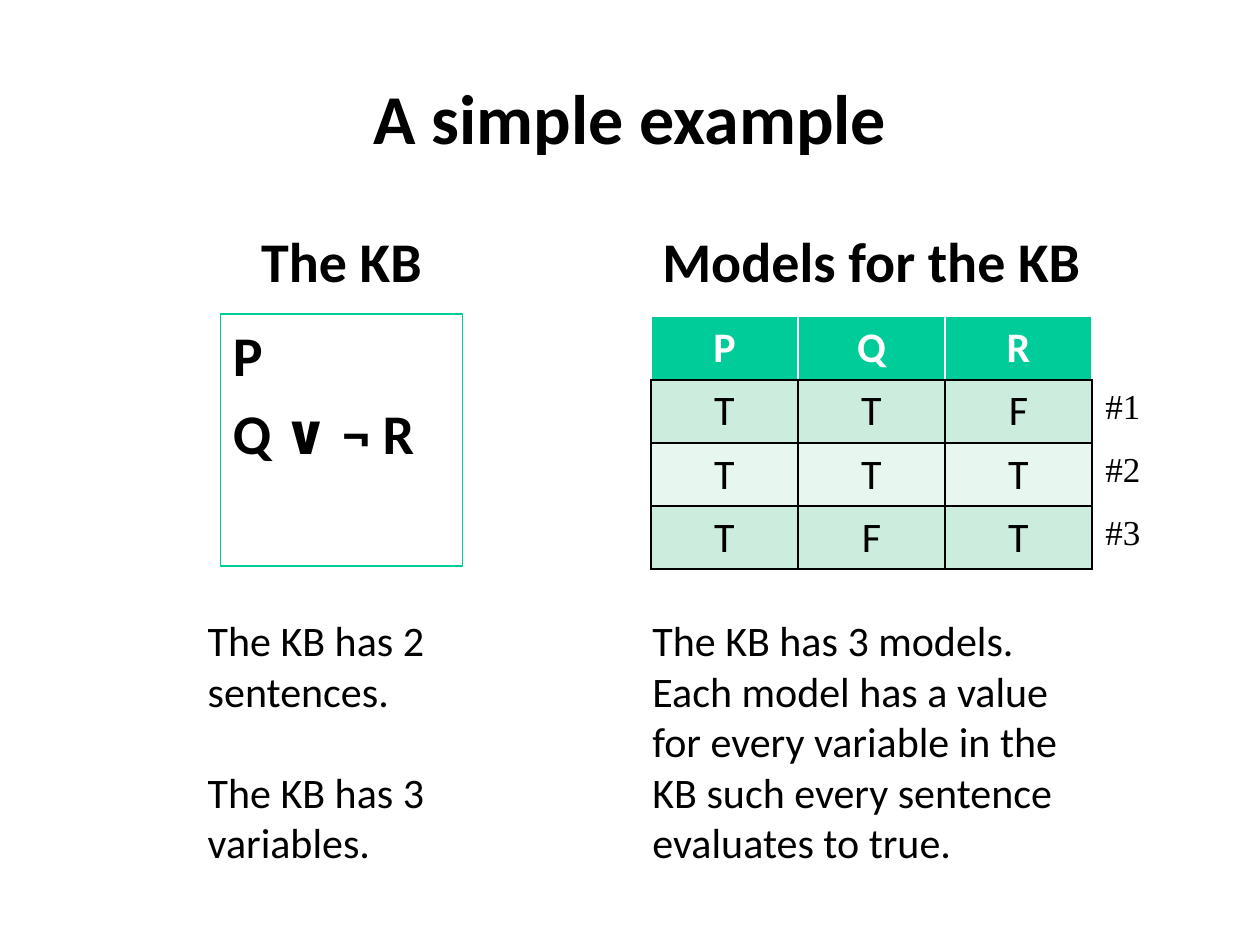
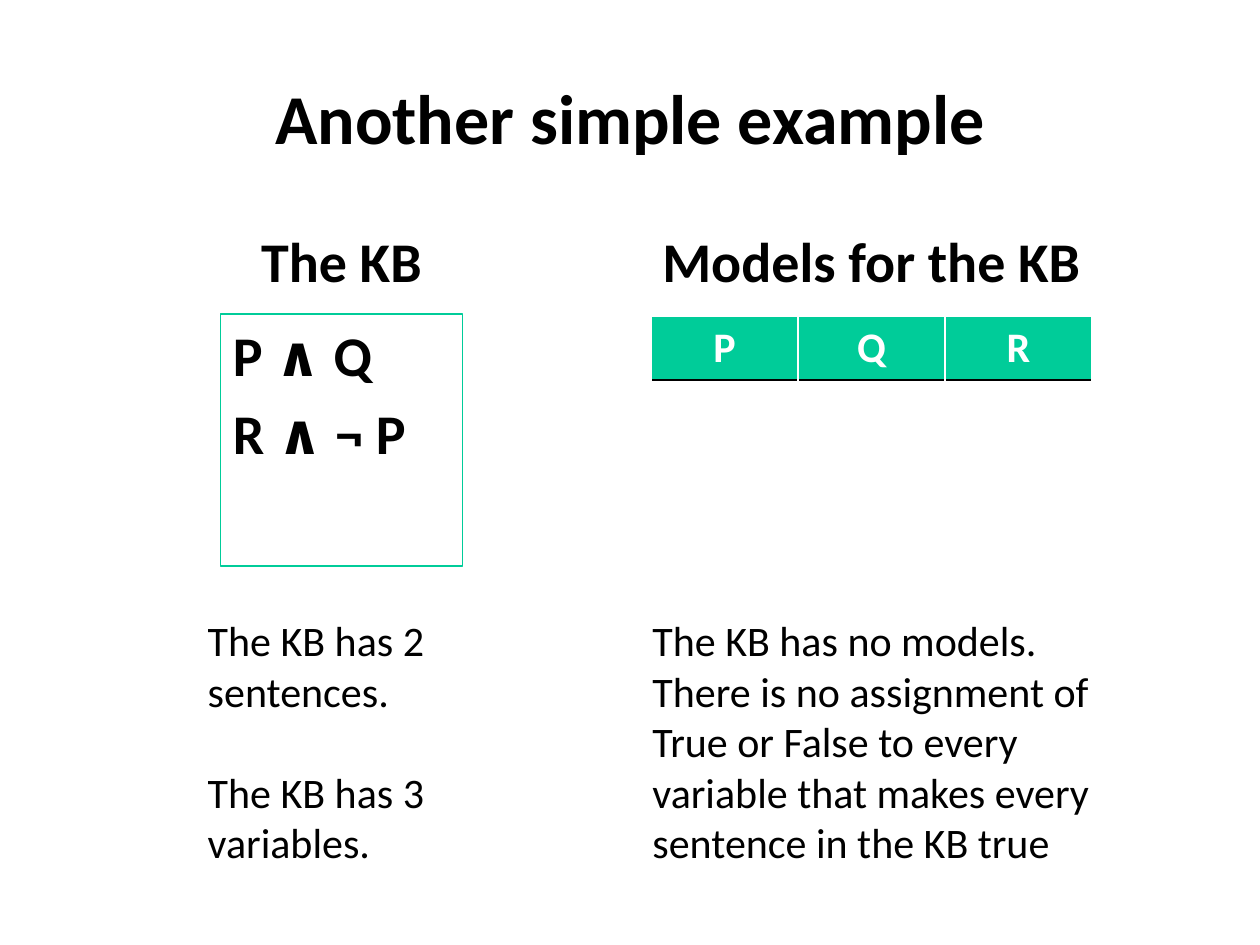
import pptx
import pptx.util
import pptx.dml.color
import pptx.enum.shapes
import pptx.enum.text
import pptx.oxml

Pt = pptx.util.Pt
Align = pptx.enum.text.PP_ALIGN
Anchor = pptx.enum.text.MSO_ANCHOR

# Shared look
GREEN, MINT, PALE = "00CC99", "CCECDE", "E7F6EF"
BLACK, WHITE = "000000", "FFFFFF"
ROW = 36
NS = 'xmlns:a="http://schemas.openxmlformats.org/drawingml/2006/main"'


def tint(code):
    return pptx.dml.color.RGBColor.from_string(code)


def write(frame, text, size=24, bold=False, color=BLACK, font="Calibri",
          align=Align.LEFT, anchor=Anchor.TOP, gap=0, wrap=True):
    """Fill a text frame, one paragraph for each line of text."""
    frame.word_wrap = wrap
    frame.vertical_anchor = anchor
    for num, line in enumerate(text.split("\n")):
        para = frame.paragraphs[0] if num == 0 else frame.add_paragraph()
        para.alignment = align
        para.space_before = Pt(gap if num else 0)
        run = para.add_run()
        run.text = line
        run.font.name, run.font.size, run.font.bold = font, Pt(size), bold
        run.font.color.rgb = tint(color)


# What differs from slide to slide
slides = [
    ("A simple example", "P\nQ ∨ ¬ R", ["TTF", "TTT", "TFT"],
     "The KB has 3 models. Each model has a value for every variable "
     "in the KB such every sentence evaluates to true."),
    ("Another simple example", "P ∧ Q\nR ∧ ¬ P", [],
     "The KB has no models. There is no assignment of True or False to "
     "every variable that makes every sentence in the KB true"),
]

deck = pptx.Presentation()
deck.slide_width, deck.slide_height = Pt(720), Pt(540)

for title, rules, models, note in slides:
    slide = deck.slides.add_slide(deck.slide_layouts[6])
    shapes = slide.shapes

    # Title and column heads
    head = dict(bold=True, align=Align.CENTER)
    box = shapes.add_textbox(Pt(36), Pt(21.6), Pt(648), Pt(90))
    write(box.text_frame, title, size=40, anchor=Anchor.MIDDLE, **head)
    for left, width, label in [(126, 138.24, "The KB"),
                               (360, 276, "Models for the KB")]:
        box = shapes.add_textbox(Pt(left), Pt(121), Pt(width), Pt(50.4))
        write(box.text_frame, label, size=32, anchor=Anchor.BOTTOM, **head)

    # Framed sentences of the KB
    frame = shapes.add_shape(pptx.enum.shapes.MSO_SHAPE.RECTANGLE,
                             Pt(126), Pt(179.4), Pt(138.24), Pt(144))
    frame.shadow.inherit = False
    frame.fill.background()
    frame.line.color.rgb = tint(GREEN)
    frame.line.width = Pt(0.75)
    write(frame.text_frame, rules, size=32, bold=True, gap=6.4)

    # Table of models
    rows = ["PQR"] + models
    grid = shapes.add_table(len(rows), 3, Pt(372), Pt(181), Pt(252),
                            Pt(ROW * len(rows))).table
    for r, row in enumerate(rows):
        grid.rows[r].height = Pt(ROW)
        top = r == 0
        for c, mark in enumerate(row):
            cell = grid.cell(r, c)
            props = cell._tc.get_or_add_tcPr()
            for side in "LRTB":
                edge = WHITE if top and side != "B" else BLACK
                props.append(pptx.oxml.parse_xml(
                    f'<a:ln{side} {NS} w="12700"><a:solidFill>'
                    f'<a:srgbClr val="{edge}"/></a:solidFill></a:ln{side}>'))
            cell.fill.solid()
            cell.fill.fore_color.rgb = tint(
                GREEN if top else MINT if r % 2 else PALE)
            write(cell.text_frame, mark, bold=top, align=Align.CENTER,
                  color=WHITE if top else BLACK)

    # Remarks below
    facts = "The KB has 2 sentences.\nThe KB has 3 variables."
    for left, width, text in [(111.6, 166.32, facts), (365.76, 270.72, note)]:
        box = shapes.add_textbox(Pt(left), Pt(347.8), Pt(width), Pt(152.64))
        write(box.text_frame, text, gap=29)

    # Model numbers beside the rows
    for num in range(len(models)):
        box = shapes.add_textbox(Pt(624.6), Pt(216 + ROW * num),
                                 Pt(34.56), Pt(31.68))
        write(box.text_frame, f"#{num + 1}", size=20,
              font="Times New Roman", wrap=False)
        box.text_frame.auto_size = pptx.enum.text.MSO_AUTO_SIZE.SHAPE_TO_FIT_TEXT

deck.save("out.pptx")
